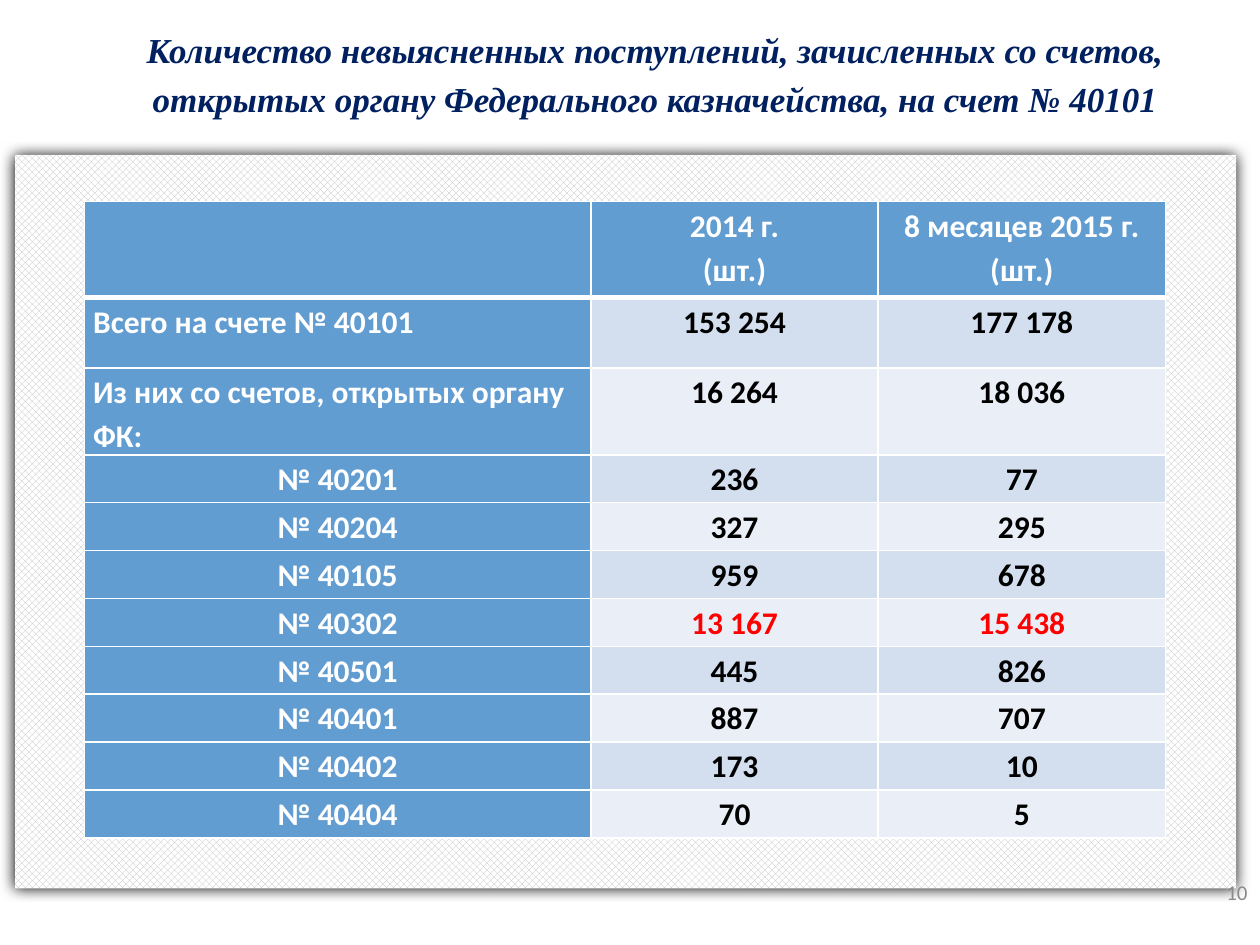
from lxml.etree import SubElement
from pptx import Presentation
from pptx.dml.color import RGBColor
from pptx.enum.dml import MSO_PATTERN
from pptx.enum.shapes import MSO_SHAPE
from pptx.enum.text import MSO_ANCHOR, MSO_AUTO_SIZE, PP_ALIGN
from pptx.oxml import parse_xml
from pptx.oxml.ns import nsdecls, qn
from pptx.util import Inches, Pt

WHITE, BLACK, RED, BLUE = "FFFFFF", "000000", "FF0000", "629DD1"
BANDS = ("D3DFEE", "EAEFF7")
TITLE = ("Количество невыясненных поступлений, зачисленных со счетов, "
         "открытых органу Федерального казначейства, на счет № 40101")
HEADER = ("", "2014 г.\n(шт.)", "8 месяцев 2015 г.\n(шт.)")
ROWS = [
    ("Всего на счете № 40101", "153 254", "177 178"),
    ("Из них со счетов, открытых органу ФК:", "16 264", "18 036"),
    ("№ 40201", "236", "77"),
    ("№ 40204", "327", "295"),
    ("№ 40105", "959", "678"),
    ("№ 40302", "13 167", "15 438"),
    ("№ 40501", "445", "826"),
    ("№ 40401", "887", "707"),
    ("№ 40402", "173", "10"),
    ("№ 40404", "70", "5"),
]
HIGHLIGHTED = "№ 40302"
COL_WIDTHS = (4.02, 2.28, 2.28)
ROW_HEIGHTS = [0.76, 0.56, 0.69] + [0.38] * 8


def rgb(value):
    return RGBColor.from_string(value)


def write(tf, text, color, align, spacing=1.0, **font):
    """Fill a text frame, one paragraph for each line."""
    tf.text = text
    for p in tf.paragraphs:
        p.alignment, p.line_spacing = align, spacing
        for r in p.runs:
            r.font.color.rgb = rgb(color)
            for name, value in font.items():
                setattr(r.font, name, value)


def add_title(s):
    sp = s.shapes.title
    sp.left, sp.top, sp.width, sp.height = map(Inches, (0.67, 0.13, 9.06, 0.88))
    tf = sp.text_frame
    tf.word_wrap = True
    tf.auto_size = MSO_AUTO_SIZE.SHAPE_TO_FIT_TEXT
    tf.vertical_anchor = MSO_ANCHOR.TOP
    write(tf, TITLE, "002060", PP_ALIGN.CENTER, 1.15,
          name="Times New Roman", size=Pt(20), bold=True, italic=True)


def add_panel(s):
    sp = s.shapes.add_shape(MSO_SHAPE.RECTANGLE, *map(Inches, (0.12, 1.23, 9.69, 5.82)))
    sp.fill.patterned()
    sp.fill.pattern = MSO_PATTERN.from_xml("openDmnd")
    sp.fill.fore_color.rgb = rgb("BFBFBF")
    sp.fill.back_color.rgb = rgb(WHITE)
    sp.line.fill.background()
    # Soft shadow around the panel
    sp.shadow.inherit = False
    effects = sp._element.spPr.find(qn("a:effectLst"))
    shadow = SubElement(effects, qn("a:outerShdw"), blurRad=str(Pt(8.5)),
                        dist=str(Pt(1)), dir="5400000", algn="t", rotWithShape="0")
    SubElement(shadow, qn("a:srgbClr"), val=BLACK)


def set_borders(cell, **widths):
    tcPr = cell._tc.get_or_add_tcPr()
    for side in "LRTB":
        tcPr.append(parse_xml(
            f'<a:ln{side} {nsdecls("a")} w="{Pt(widths.get(side, 1))}">'
            f'<a:solidFill><a:srgbClr val="{WHITE}"/></a:solidFill></a:ln{side}>'))


def format_cell(cell, text, fill, color, align, borders):
    cell.margin_left = cell.margin_right = Inches(0.07)
    cell.margin_top = cell.margin_bottom = 0
    set_borders(cell, **borders)
    cell.fill.solid()
    cell.fill.fore_color.rgb = rgb(fill)
    write(cell.text_frame, text, color, align, 1.15,
          name="Calibri", size=Pt(18), bold=True)


def add_receipts_table(s):
    table = s.shapes.add_table(
        len(ROW_HEIGHTS), len(COL_WIDTHS), Inches(0.67), Inches(1.6),
        Inches(sum(COL_WIDTHS)), Inches(sum(ROW_HEIGHTS))).table
    for col, width in zip(table.columns, COL_WIDTHS):
        col.width = Inches(width)
    for row, height in zip(table.rows, ROW_HEIGHTS):
        row.height = Inches(height)

    for i, values in enumerate([HEADER] + ROWS):
        # A thick rule parts the header from the body
        borders = {0: {"B": 3}, 1: {"T": 3}}.get(i, {})
        for j, text in enumerate(values):
            if i == 0 or j == 0:
                fill, color = BLUE, WHITE
            else:
                fill = BANDS[(i - 1) % 2]
                color = RED if values[0] == HIGHLIGHTED else BLACK
            align = PP_ALIGN.LEFT if j == 0 and i in (1, 2) else PP_ALIGN.CENTER
            format_cell(table.cell(i, j), text, fill, color, align, borders)


def add_page_number(s):
    tf = s.shapes.add_textbox(*map(Inches, (7.75, 6.88, 2.25, 0.4))).text_frame
    tf.word_wrap = True
    tf.vertical_anchor = MSO_ANCHOR.MIDDLE
    write(tf, "10", "898989", PP_ALIGN.RIGHT, name="Calibri", size=Pt(12))


def main():
    prs = Presentation()
    prs.slide_width, prs.slide_height = Inches(10), Inches(7.5)
    s = prs.slides.add_slide(prs.slide_layouts[5])
    add_panel(s)
    add_title(s)
    add_page_number(s)
    add_receipts_table(s)
    prs.save("out.pptx")


if __name__ == "__main__":
    main()
